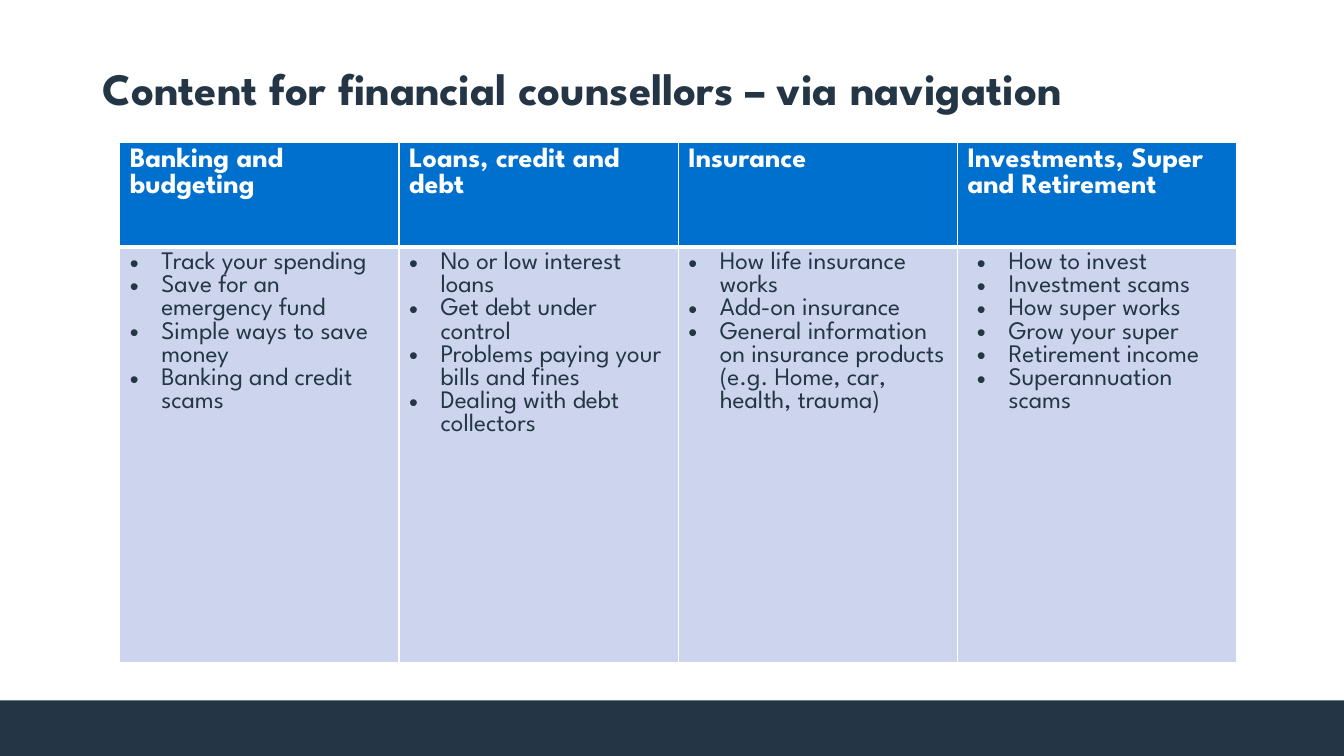
from lxml import etree
from pptx import Presentation
from pptx import util as u
from pptx.dml.color import RGBColor
from pptx.enum import shapes, text
from pptx.oxml.ns import qn

PX = 9525  # EMU, 96 px to the inch
FONT = "League Spartan"
NAVY, BLUE, PALE, WHITE = "243645", "0070CE", "CCD5ED", "FFFFFF"

TITLE = "Content for financial counsellors – via navigation"
# heading, left margin of the bullet text, topics
TOPIC_COLUMNS = [
    ("Banking and budgeting", 30, [
        "Track your spending",
        "Save for an emergency fund",
        "Simple ways to save money",
        "Banking and credit scams"]),
    ("Loans, credit and debt", 30, [
        "No or low interest loans",
        "Get debt under control",
        "Problems paying your bills and fines",
        "Dealing with debt collectors"]),
    ("Insurance", 30, [
        "How life insurance works",
        "Add-on insurance",
        "General information on insurance products "
        "(e.g. Home, car, health, trauma)"]),
    ("Investments, Super and Retirement", 39, [
        "How to invest",
        "Investment scams",
        "How super works",
        "Grow your super",
        "Retirement income",
        "Superannuation scams"]),
]


def px(*lengths):
    return [u.Emu(length * PX) for length in lengths]


def paint(color_format, color):
    color_format.rgb = RGBColor.from_string(color)


def fill(part, color):
    part.fill.solid()
    paint(part.fill.fore_color, color)


def style(paragraph, size, color, bold):
    font = paragraph.font
    font.name, font.size, font.bold = FONT, u.Pt(size), bold
    paint(font.color, color)


def add_bullet(paragraph, margin, hanging=30):
    props = paragraph._p.get_or_add_pPr()
    props.set("marL", str(margin * PX))
    props.set("indent", str(-hanging * PX))
    etree.SubElement(props, qn("a:buFont"), typeface="Arial")
    etree.SubElement(props, qn("a:buChar"), char="•")


def add_borders(cell, top, bottom):
    """White cell borders; widths in points, 1 pt at the sides."""
    props = cell._tc.get_or_add_tcPr()
    widths = {"a:lnL": 1, "a:lnR": 1, "a:lnT": top, "a:lnB": bottom}
    for position, (tag, width) in enumerate(widths.items()):
        line = etree.Element(qn(tag), w=str(u.Pt(width)))
        solid = etree.SubElement(line, qn("a:solidFill"))
        etree.SubElement(solid, qn("a:srgbClr"), val=WHITE)
        props.insert(position, line)


def add_footer_band(slide, left, top, width, height):
    band = slide.shapes.add_shape(shapes.MSO_SHAPE.RECTANGLE,
                                  *px(left, top, width, height))
    band.shadow.inherit = False
    fill(band, NAVY)
    band.line.fill.background()


def add_title(slide, left, top, width, height):
    frame = slide.shapes.add_textbox(*px(left, top, width, height)).text_frame
    frame.word_wrap = True
    frame.vertical_anchor = text.MSO_ANCHOR.MIDDLE
    heading = frame.paragraphs[0]
    heading.text = TITLE
    heading.line_spacing = 0.9
    style(heading, 32, NAVY, True)


def add_topic_table(slide, left, top, width, height):
    table = slide.shapes.add_table(2, len(TOPIC_COLUMNS),
                                   *px(left, top, width, height)).table
    header_height = height // 5
    table.rows[0].height, table.rows[1].height = px(header_height,
                                                    height - header_height)
    for column, (heading, margin, topics) in enumerate(TOPIC_COLUMNS):
        header, body = table.cell(0, column), table.cell(1, column)
        fill(header, BLUE)
        add_borders(header, top=1, bottom=3)
        header.text = heading
        style(header.text_frame.paragraphs[0], 20, WHITE, True)

        fill(body, PALE)
        add_borders(body, top=3, bottom=1)
        body.text = "\n".join(topics)
        for paragraph in body.text_frame.paragraphs:
            add_bullet(paragraph, margin)
            style(paragraph, 18, NAVY, False)


def main():
    deck = Presentation()
    deck.slide_width, deck.slide_height = px(1280, 720)
    slide = deck.slides.add_slide(deck.slide_layouts[6])
    add_footer_band(slide, 0, 667, 1280, 53)
    add_title(slide, 88, 17, 1104, 139)
    add_topic_table(slide, 114, 136, 1064, 495)
    deck.save("out.pptx")


if __name__ == "__main__":
    main()
